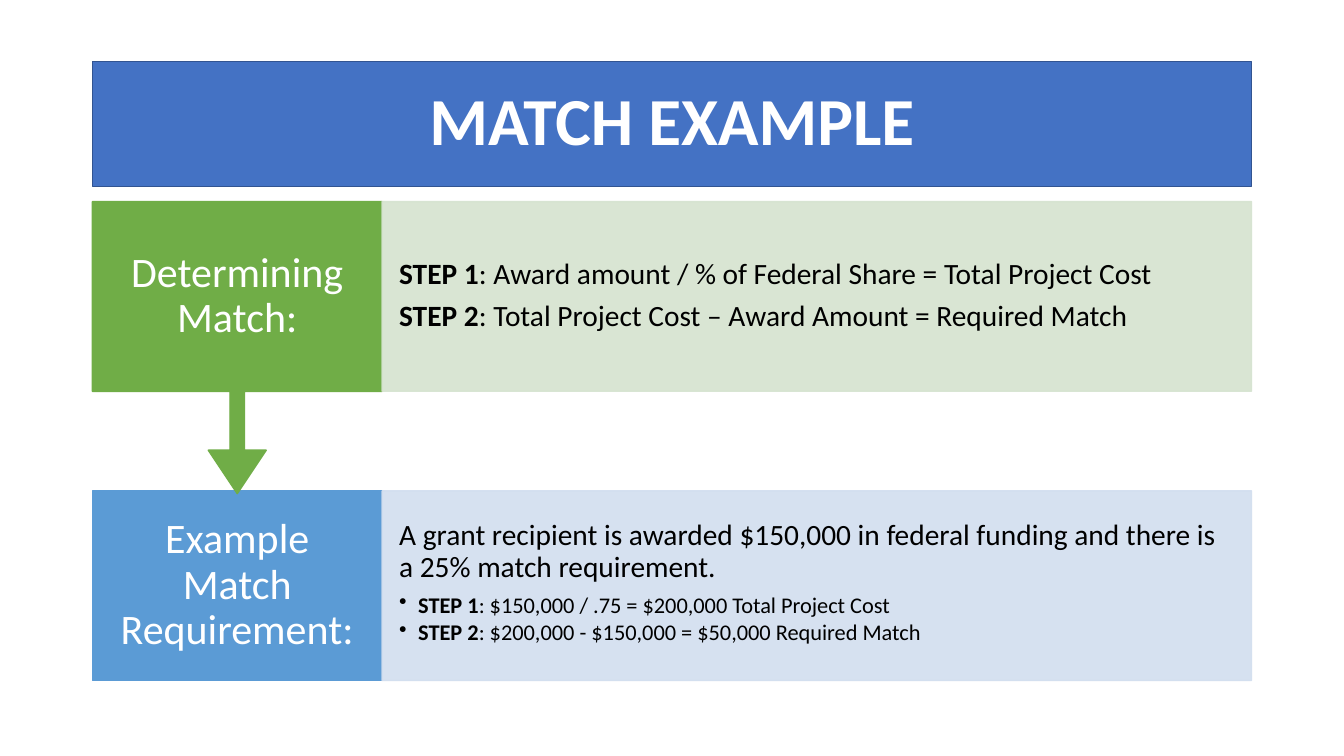
from pptx import Presentation
from pptx.dml.color import RGBColor
from pptx.enum.shapes import MSO_SHAPE
from pptx.enum.text import MSO_ANCHOR, PP_ALIGN
from pptx.oxml.ns import qn
from pptx.util import Cm, Pt
from lxml.etree import SubElement

COLORS = {
    "title": "4472C4", "title_edge": "325491",
    "green": "70AD47", "pale_green": "D5E3CF",
    "blue": "5B9BD5", "pale_blue": "D2DEEF",
    "white": "FFFFFF", "black": "000000",
}
LEFT, WIDTH = 2.33, 29.21
LABEL_WIDTH = 7.3
ROW_HEIGHT = 4.78
METHOD_TOP, EXAMPLE_TOP = 5.08, 12.37
CALLOUT_HEIGHT = 7.36


class MatchSlide:
    font = "Calibri"
    line_spacing = 0.9

    def __init__(self, slide):
        self.slide = slide

    def block(self, kind, box, fill, edge=None, alpha=None):
        shape = self.slide.shapes.add_shape(kind, *(Cm(v) for v in box))
        shape.shadow.inherit = False
        shape.fill.solid()
        shape.fill.fore_color.rgb = RGBColor.from_string(COLORS[fill])
        shape.line.color.rgb = RGBColor.from_string(COLORS[edge or fill])
        shape.line.width = Pt(1)
        if alpha:
            for color in shape._element.spPr.iter(qn("a:srgbClr")):
                SubElement(color, qn("a:alpha"), val=str(alpha * 1000))
        return shape

    def frame(self, shape, inset_x, inset_y, anchor=MSO_ANCHOR.MIDDLE):
        frame = shape.text_frame
        frame.word_wrap = True
        frame.vertical_anchor = anchor
        frame.margin_left = frame.margin_right = Cm(inset_x)
        frame.margin_top = frame.margin_bottom = Cm(inset_y)
        return frame

    def paragraph(self, frame, runs, size, color, align=PP_ALIGN.LEFT, after=0, bullet=False):
        first = frame.paragraphs[0]
        paragraph = frame.add_paragraph() if first.runs else first
        paragraph.alignment = align
        paragraph.line_spacing = self.line_spacing
        paragraph.space_after = Pt(after)
        if bullet:
            paragraph.level = 1
            properties = paragraph._p.get_or_add_pPr()
            properties.set("marL", str(Cm(0.48)))
            properties.set("indent", str(-Cm(0.48)))
            SubElement(properties, qn("a:buChar"), char="•")
        for text, bold in runs:
            run = paragraph.add_run()
            run.text = text
            run.font.name = self.font
            run.font.size = Pt(size)
            run.font.bold = bold
            run.font.color.rgb = RGBColor.from_string(COLORS[color])

    def title(self, text):
        banner = self.block(MSO_SHAPE.RECTANGLE, (LEFT, 1.55, WIDTH, 3.15), "title", "title_edge")
        self.paragraph(self.frame(banner, 0.25, 0.13), [(text, True)], 48, "white", PP_ALIGN.CENTER)

    def label(self, text, top, fill, kind=MSO_SHAPE.RECTANGLE, height=ROW_HEIGHT, adjustments=()):
        label = self.block(kind, (LEFT, top, LABEL_WIDTH, height), fill)
        for index, value in enumerate(adjustments):
            label.adjustments[index] = value
        self.paragraph(self.frame(label, 0.5, 0.58), [(text, False)], 30, "white", PP_ALIGN.CENTER)

    def panel(self, top, fill, lines, anchor=MSO_ANCHOR.MIDDLE):
        box = (LEFT + LABEL_WIDTH, top, WIDTH - LABEL_WIDTH, ROW_HEIGHT)
        frame = self.frame(self.block(MSO_SHAPE.RECTANGLE, box, fill, alpha=90), 0.43, 0.74, anchor)
        for runs, bullet in lines:
            size, share = (16, 0.15) if bullet else (21, 0.35)
            self.paragraph(frame, runs, size, "black", after=size * share, bullet=bullet)


def step(number, text):
    return [(f"STEP {number}", True), (f": {text}", False)]


def main():
    deck = Presentation()
    deck.slide_width, deck.slide_height = Cm(33.87), Cm(19.05)
    match = MatchSlide(deck.slides.add_slide(deck.slide_layouts[6]))

    match.title("MATCH EXAMPLE")

    match.label("Example Match Requirement:", EXAMPLE_TOP, "blue")
    award = "A grant recipient is awarded $150,000 in federal funding and there is a 25% match requirement."
    match.panel(EXAMPLE_TOP, "pale_blue", [
        ([(award, False)], False),
        (step(1, "$150,000 / .75 = $200,000 Total Project Cost"), True),
        (step(2, "$200,000 - $150,000 = $50,000 Required Match"), True),
    ], MSO_ANCHOR.TOP)

    match.label("Determining Match:", METHOD_TOP, "green", MSO_SHAPE.DOWN_ARROW_CALLOUT,
                CALLOUT_HEIGHT, (0.05, 0.1, 0.15, 0.65))
    match.panel(METHOD_TOP, "pale_green", [
        (step(1, "Award amount / % of Federal Share = Total Project Cost"), False),
        (step(2, "Total Project Cost – Award Amount = Required Match"), False),
    ])

    deck.save("out.pptx")


if __name__ == "__main__":
    main()
